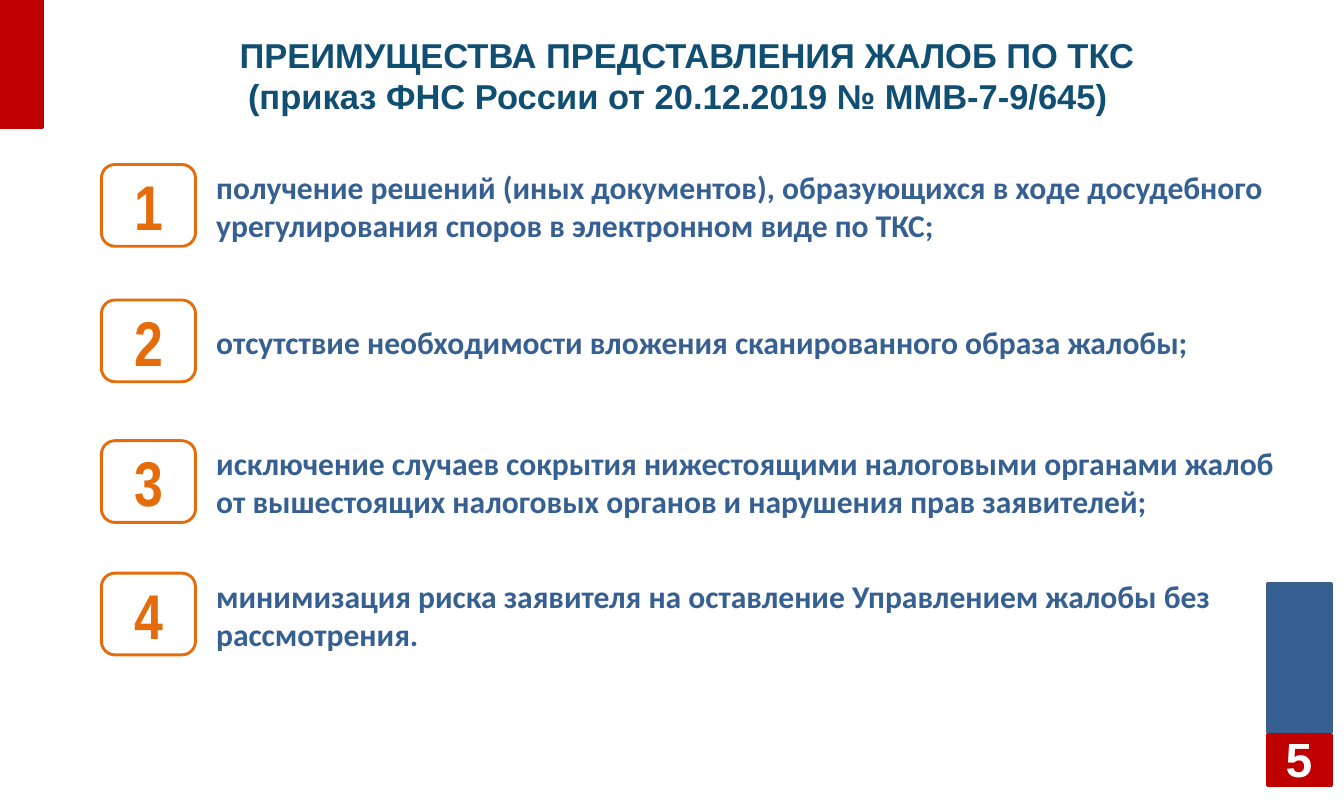
import pptx
import pptx.util
import pptx.dml.color
import pptx.enum.shapes
import pptx.enum.text

RGB = pptx.dml.color.RGBColor
RED = RGB(0xC0, 0x00, 0x00)
BLUE = RGB(0x37, 0x60, 0x92)
EDGE = RGB(0x3A, 0x5F, 0x8C)
TEAL = RGB(0x10, 0x4E, 0x72)
ORANGE = RGB(0xE4, 0x6C, 0x0A)
WHITE = RGB(0xFF, 0xFF, 0xFF)

PX = 9144  # 100 px to the inch
KIND = pptx.enum.shapes.MSO_SHAPE
ALIGN = pptx.enum.text.PP_ALIGN

deck = pptx.Presentation()
deck.slide_width = 1299 * PX
deck.slide_height = 782 * PX
slide = deck.slides.add_slide(deck.slide_layouts[6])


def draw(kind, box, fill, line):
    shape = slide.shapes.add_shape(kind, *[n * PX for n in box])
    shape.shadow.inherit = False
    if fill is None:
        shape.fill.background()
    else:
        shape.fill.solid()
        shape.fill.fore_color.rgb = fill
    shape.line.color.rgb = line
    shape.line.width = pptx.util.Pt(2)
    return shape


def write(shape, text, size, font, color, align, inset=(0, 5)):
    frame = shape.text_frame
    frame.word_wrap = True
    frame.vertical_anchor = pptx.enum.text.MSO_ANCHOR.MIDDLE
    frame.margin_left = frame.margin_right = inset[0] * PX
    frame.margin_top = frame.margin_bottom = inset[1] * PX
    frame.text = text
    for para in frame.paragraphs:
        para.alignment = align
        for run in para.runs:
            run.font.size = pptx.util.Pt(size)
            run.font.name = font
            run.font.bold = True
            run.font.color.rgb = color


# Corner blocks
for box, fill, line in [
    ((1225, 564, 62, 144), BLUE, EDGE),
    ((1225, 710, 62, 49), RED, RED),
    ((0, 0, 41, 123), RED, RED),
]:
    draw(KIND.RECTANGLE, box, fill, line)

# Title, its second line set slightly to the left
title = slide.shapes.add_textbox(152 * PX, 21 * PX, 1024 * PX, 104 * PX)
write(title, "ПРЕИМУЩЕСТВА ПРЕДСТАВЛЕНИЯ ЖАЛОБ ПО ТКС\n"
      "(приказ ФНС России от 20.12.2019 № ММВ-7-9/645)",
      24, "Arial", TEAL, ALIGN.CENTER)
title.text_frame.paragraphs[1]._p.get_or_add_pPr().set("marR", str(18 * PX))

# Page number
page = slide.shapes.add_textbox(1222 * PX, 712 * PX, 67 * PX, 42 * PX)
write(page, "5", 33.4, "Arial", WHITE, ALIGN.CENTER)

# Numbered benefits
items = [
    (159, "получение решений (иных документов), образующихся в ходе "
          "досудебного урегулирования споров в электронном виде по ТКС;"),
    (290, "отсутствие необходимости вложения сканированного образа жалобы;"),
    (426, "исключение случаев сокрытия нижестоящими налоговыми органами жалоб "
          "от вышестоящих налоговых органов и нарушения прав заявителей;"),
    (554, "минимизация риска заявителя на оставление Управлением жалобы без "
          "рассмотрения."),
]
for count, (top, text) in enumerate(items, 1):
    badge = draw(KIND.ROUNDED_RECTANGLE, (98, top, 91, 79), None, ORANGE)
    write(badge, str(count), 44, "Arial Narrow", ORANGE, ALIGN.CENTER, (11, 6))
    note = slide.shapes.add_textbox(209 * PX, (top - 12) * PX, 1024 * PX, 104 * PX)
    write(note, text, 22, "Calibri", BLUE, ALIGN.LEFT)

deck.save("out.pptx")
